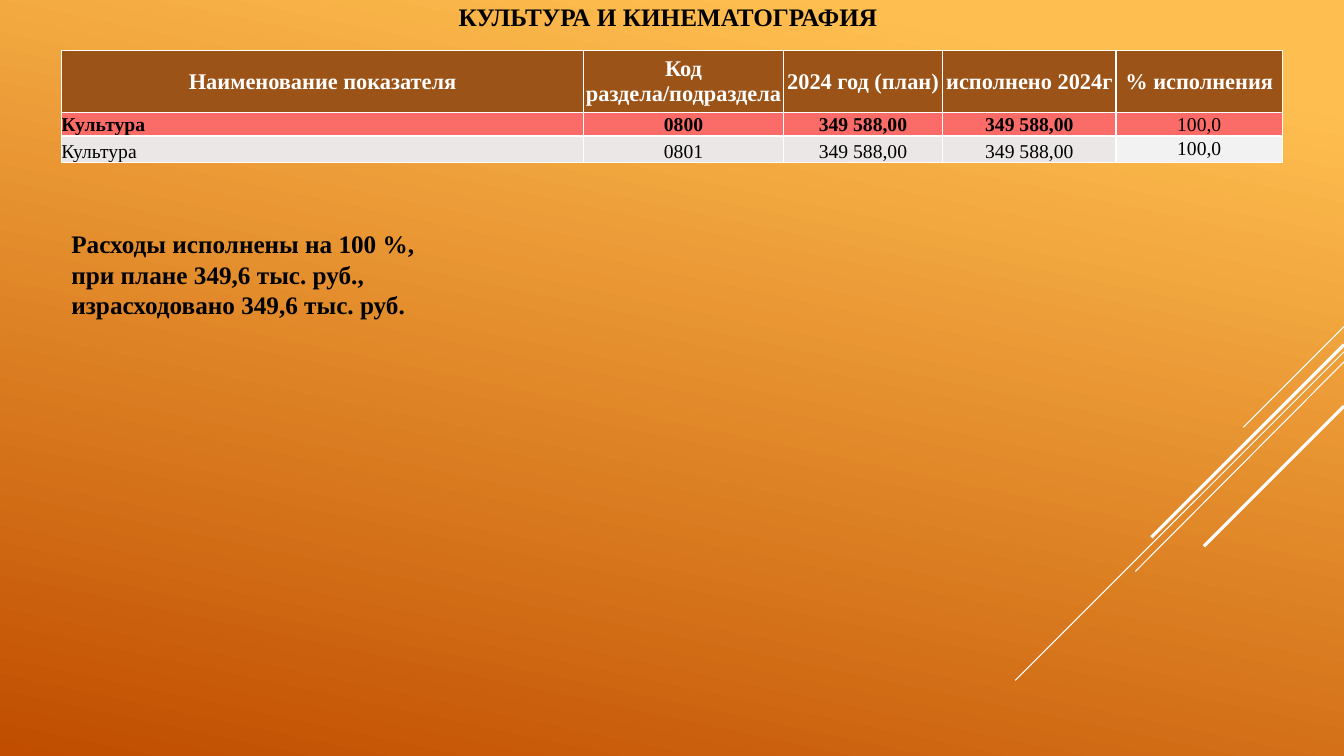
from lxml import etree
from pptx import Presentation
from pptx.dml.color import RGBColor
from pptx.enum import shapes, text
from pptx.oxml import ns
from pptx.util import Inches, Pt

FONT = "Times New Roman"
BLACK, WHITE = "000000", "FFFFFF"
BACKGROUND_STOPS = [(0.1, "FFBF50"), (1.0, "C04D00")]
BACKGROUND_ANGLE = 258  # counter-clockwise

# start x, start y, end x, end y, width in points
RAYS = [
    (13.33, 3.24, 12.33, 4.24, 0.75),
    (13.33, 3.49, 10.07, 6.75, 0.75),
    (13.33, 3.59, 11.26, 5.67, 0.75),
    (13.33, 3.42, 11.42, 5.33, 2.25),
    (13.33, 4.03, 11.94, 5.42, 2.25),
]

TABLE_LEFT, TABLE_TOP = 0.61, 0.5
COLUMN_WIDTHS = [5.18, 1.98, 1.58, 1.72, 1.65]
ROW_HEIGHTS = [0.62, 0.23, 0.26]
ROWS = [
    ["Наименование показателя", "Код раздела/подраздела", "2024 год (план)",
     "исполнено 2024г", "% исполнения"],
    ["Культура", "0800", "349 588,00", "349 588,00", "100,0"],
    ["Культура", "0801", "349 588,00", "349 588,00", "100,0"],
]
# fill, fill of the last column, size, colour, bold, bold in the last column
ROW_STYLES = [
    ("9C5317", "9C5317", 16, WHITE, True, True),
    ("FB6B67", "FB6B67", 14, BLACK, True, False),
    ("ECE7E7", "F2F2F2", 14, BLACK, False, False),
]

TITLE = ["КУЛЬТУРА И КИНЕМАТОГРАФИЯ"]
SUMMARY = [
    "Расходы исполнены на 100 %,",
    "при плане 349,6 тыс. руб.,",
    "израсходовано 349,6 тыс. руб.",
]


def rgb(value):
    return RGBColor.from_string(value)


def add_run(paragraph, words, size, colour, bold):
    run = paragraph.add_run()
    run.text = words
    run.font.name = FONT
    run.font.size = Pt(size)
    run.font.bold = bold
    run.font.color.rgb = rgb(colour)


def add_text(slide, box, lines, align):
    shape = slide.shapes.add_textbox(*map(Inches, box))
    frame = shape.text_frame
    frame.word_wrap = True
    frame.auto_size = text.MSO_AUTO_SIZE.SHAPE_TO_FIT_TEXT
    for index, line in enumerate(lines):
        paragraph = frame.add_paragraph() if index else frame.paragraphs[0]
        paragraph.alignment = align
        add_run(paragraph, line, 18, BLACK, True)


def paint_background(slide):
    fill = slide.background.fill
    fill.gradient()
    fill.gradient_angle = BACKGROUND_ANGLE
    for stop, (position, colour) in zip(fill.gradient_stops, BACKGROUND_STOPS):
        stop.position = position
        stop.color.rgb = rgb(colour)


def add_ray(slide, x1, y1, x2, y2, width):
    ray = slide.shapes.add_connector(
        shapes.MSO_CONNECTOR.STRAIGHT, *map(Inches, (x1, y1, x2, y2)))
    ray.line.color.rgb = rgb(WHITE)
    ray.line.width = Pt(width)
    etree.SubElement(ray._element.spPr, ns.qn("a:effectLst"))


def add_borders(cell, colour, width):
    properties = cell._tc.get_or_add_tcPr()
    for side in ("lnL", "lnR", "lnT", "lnB"):
        line = etree.SubElement(properties, ns.qn(f"a:{side}"), w=str(Pt(width)))
        fill = etree.SubElement(line, ns.qn("a:solidFill"))
        etree.SubElement(fill, ns.qn("a:srgbClr"), val=colour)


def add_budget_table(slide):
    table = slide.shapes.add_table(
        len(ROWS), len(COLUMN_WIDTHS), Inches(TABLE_LEFT), Inches(TABLE_TOP),
        Inches(sum(COLUMN_WIDTHS)), Inches(sum(ROW_HEIGHTS))).table
    for column, width in zip(table.columns, COLUMN_WIDTHS):
        column.width = Inches(width)
    for row, height in zip(table.rows, ROW_HEIGHTS):
        row.height = Inches(height)

    last = len(COLUMN_WIDTHS) - 1
    for r, (row, style) in enumerate(zip(ROWS, ROW_STYLES)):
        fill, last_fill, size, colour, bold, last_bold = style
        for c, words in enumerate(row):
            cell = table.cell(r, c)
            cell.margin_left = cell.margin_right = 0
            cell.margin_top = cell.margin_bottom = 0
            middle = r == 0 or c == last
            cell.vertical_anchor = (text.MSO_ANCHOR.MIDDLE if middle
                                    else text.MSO_ANCHOR.BOTTOM)
            add_borders(cell, WHITE, 1)
            cell.fill.solid()
            cell.fill.fore_color.rgb = rgb(last_fill if c == last else fill)
            paragraph = cell.text_frame.paragraphs[0]
            paragraph.alignment = (text.PP_ALIGN.LEFT if r and c == 0
                                   else text.PP_ALIGN.CENTER)
            add_run(paragraph, words, size, colour,
                    last_bold if c == last else bold)


def main():
    presentation = Presentation()
    presentation.slide_width = Inches(13.33)
    presentation.slide_height = Inches(7.5)
    slide = presentation.slides.add_slide(presentation.slide_layouts[6])
    paint_background(slide)
    for ray in RAYS:
        add_ray(slide, *ray)
    add_budget_table(slide)
    add_text(slide, (1.92, -0.04, 9.41, 0.4), TITLE, text.PP_ALIGN.CENTER)
    add_text(slide, (0.61, 2.22, 6.67, 1.01), SUMMARY, text.PP_ALIGN.LEFT)
    presentation.save("out.pptx")


if __name__ == "__main__":
    main()
